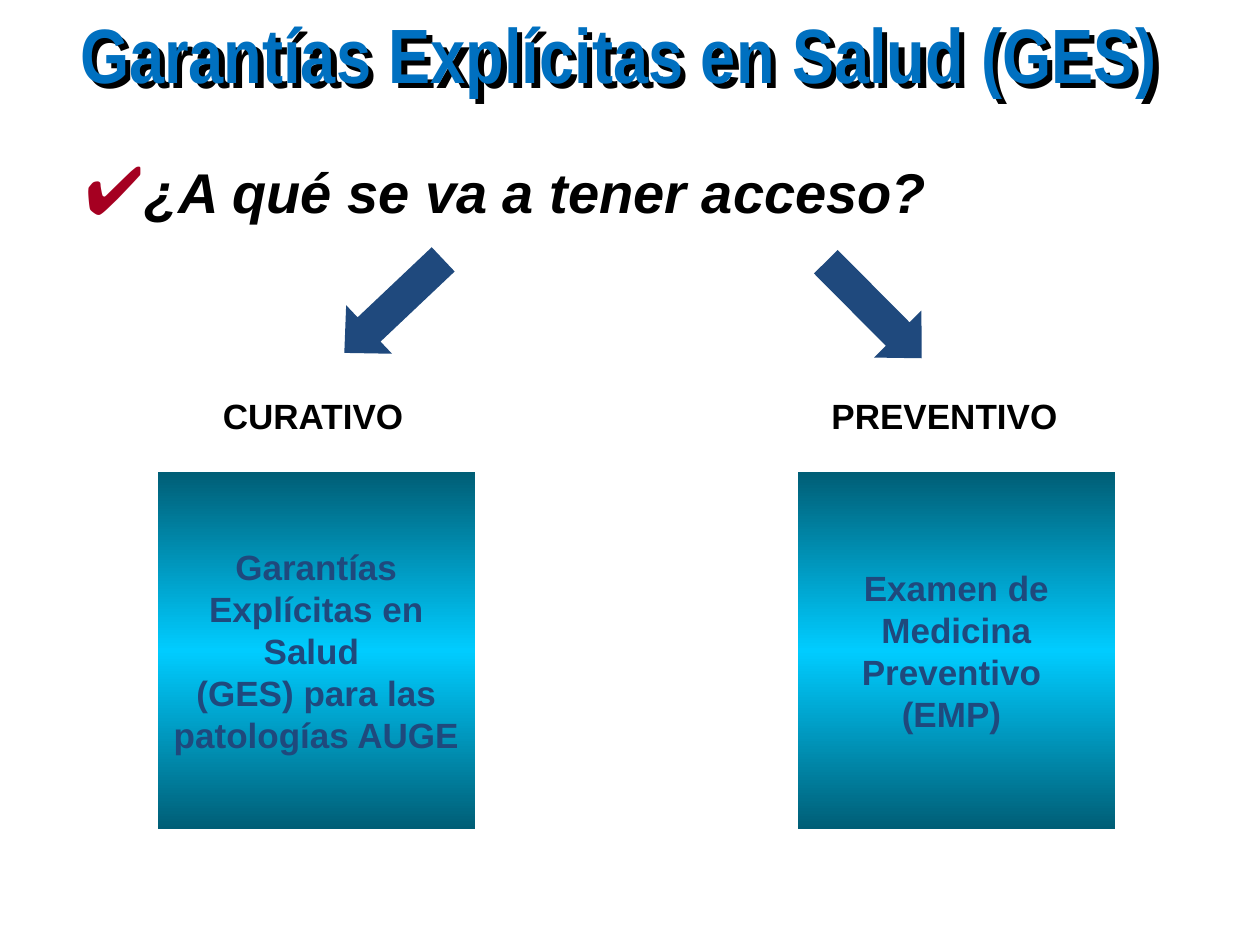
from lxml.etree import SubElement
from pptx import Presentation
from pptx.dml.color import RGBColor
from pptx.enum.shapes import MSO_SHAPE as Shape
from pptx.enum.text import MSO_ANCHOR as Anchor, MSO_AUTO_SIZE as AutoSize, PP_ALIGN as Align
from pptx.oxml.ns import qn
from pptx.util import Inches, Pt

BLACK, NAVY, TITLE_BLUE, RED = "000000", "1F497D", "0070C0", "A50021"
CYAN, TEAL = "00CCFF", "005E76"
HEADING = {"size": Pt(20), "name": "Arial", "bold": True}


def color(code):
    return RGBColor.from_string(code)


def place(item, box):
    for side, length in zip(("left", "top", "width", "height"), box):
        setattr(item, side, Inches(length))


def write(frame, lines, font, code, align=Align.LEFT):
    for number, line in enumerate(lines):
        para = frame.add_paragraph() if number else frame.paragraphs[0]
        para.alignment = align
        span = para.add_run()
        span.text = line
        for name, value in font.items():
            setattr(span.font, name, value)
        span.font.color.rgb = color(code)


def add_node(parent, tag, **values):
    return SubElement(parent, qn(tag), {name: str(value) for name, value in values.items()})


def add_title(page, box):
    title = page.shapes.title
    place(title, box)
    frame = title.text_frame
    frame.word_wrap = True
    frame.auto_size = AutoSize.NONE
    frame.vertical_anchor = Anchor.TOP
    font = {"size": Pt(44), "name": "Arial Narrow", "bold": True}
    write(frame, ["Garantías Explícitas en Salud (GES)"], font, TITLE_BLUE, Align.CENTER)
    effects = add_node(title.element.spPr, "a:effectLst")
    shadow = add_node(effects, "a:outerShdw", dist=Inches(0.06), dir=45 * 60000, algn="tl", rotWithShape=0)
    add_node(shadow, "a:srgbClr", val=BLACK)


def add_question(page, box):
    body = page.placeholders[1]
    place(body, box)
    frame = body.text_frame
    frame.auto_size = AutoSize.NONE
    frame.vertical_anchor = Anchor.TOP
    frame.margin_top = Inches(0.33)
    font = {"size": Pt(32), "name": "Arial", "bold": True, "italic": True}
    write(frame, ["¿A qué se va a tener acceso?"], font, BLACK)
    para = frame.paragraphs[0]
    para.space_before = Pt(0)
    props = para._p.get_or_add_pPr()
    props.set("marL", str(Inches(0.42)))
    props.set("indent", str(Inches(-0.42)))
    add_node(add_node(props, "a:buClr"), "a:srgbClr", val=RED)
    add_node(props, "a:buSzPct", val=120000)
    add_node(props, "a:buChar", char="✔")


def add_label(page, box, text):
    label = page.shapes.add_textbox(*map(Inches, box))
    frame = label.text_frame
    frame.word_wrap = False
    frame.auto_size = AutoSize.NONE
    write(frame, [text], HEADING, BLACK)


def add_arrow(page, box, angle):
    arrow = page.shapes.add_shape(Shape.DOWN_ARROW, *map(Inches, box))
    arrow.rotation = angle
    arrow.adjustments[0], arrow.adjustments[1] = 0.5, 0.51
    arrow.shadow.inherit = False
    arrow.fill.solid()
    arrow.fill.fore_color.rgb = color(NAVY)
    arrow.line.fill.background()


def add_panel(page, box, lines):
    panel = page.shapes.add_shape(Shape.FLOWCHART_PROCESS, *map(Inches, box))
    panel.shadow.inherit = False
    panel.line.fill.background()
    panel.fill.gradient()
    panel.fill.gradient_angle = 270
    stops = panel.fill._fill._gradFill.gsLst
    for stop in list(stops):
        stops.remove(stop)
    for position, code in ((0, TEAL), (50, CYAN), (100, TEAL)):
        add_node(add_node(stops, "a:gs", pos=position * 1000), "a:srgbClr", val=code)
    frame = panel.text_frame
    frame.word_wrap = True
    frame.vertical_anchor = Anchor.MIDDLE
    write(frame, lines, HEADING, NAVY, Align.CENTER)


def main():
    deck = Presentation()
    deck.slide_width, deck.slide_height = Inches(10), Inches(7.5)
    page = deck.slides.add_slide(deck.slide_layouts[1])
    add_question(page, (0.58, 0.92, 9.58, 1.58))
    add_label(page, (1.67, 3.08, 1.7, 0.43), "CURATIVO")
    add_label(page, (6.5, 3.08, 2.05, 0.43), "PREVENTIVO")
    add_panel(page, (1.25, 3.75, 2.52, 2.83),
              ["Garantías Explícitas en Salud ", "(GES) para las patologías AUGE"])
    add_panel(page, (6.33, 3.75, 2.52, 2.83),
              ["Examen de Medicina Preventivo ", "(EMP) "])
    add_arrow(page, (6.67, 1.92, 0.53, 1.08), 315.2)
    add_arrow(page, (2.86, 1.89, 0.53, 1.08), 46.6)
    add_title(page, (0.08, 0, 9.67, 0.83))
    deck.save("out.pptx")


if __name__ == "__main__":
    main()
